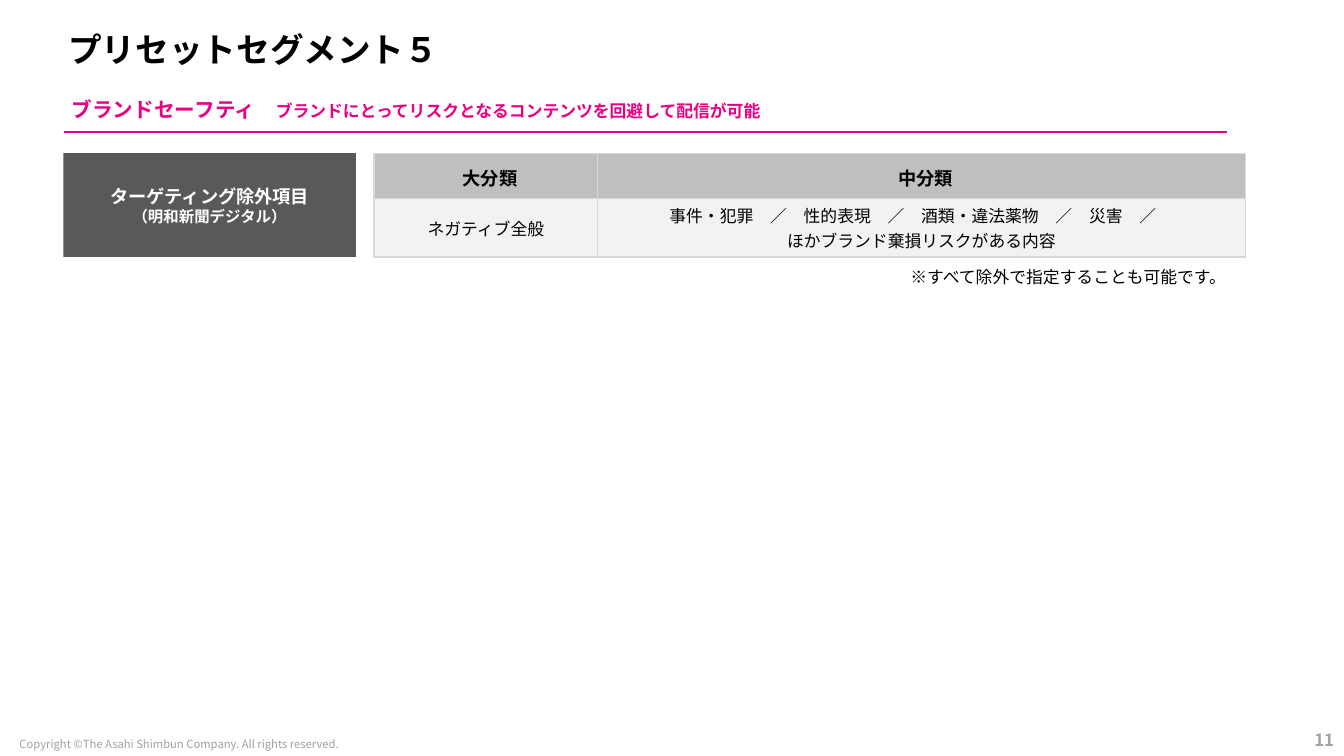
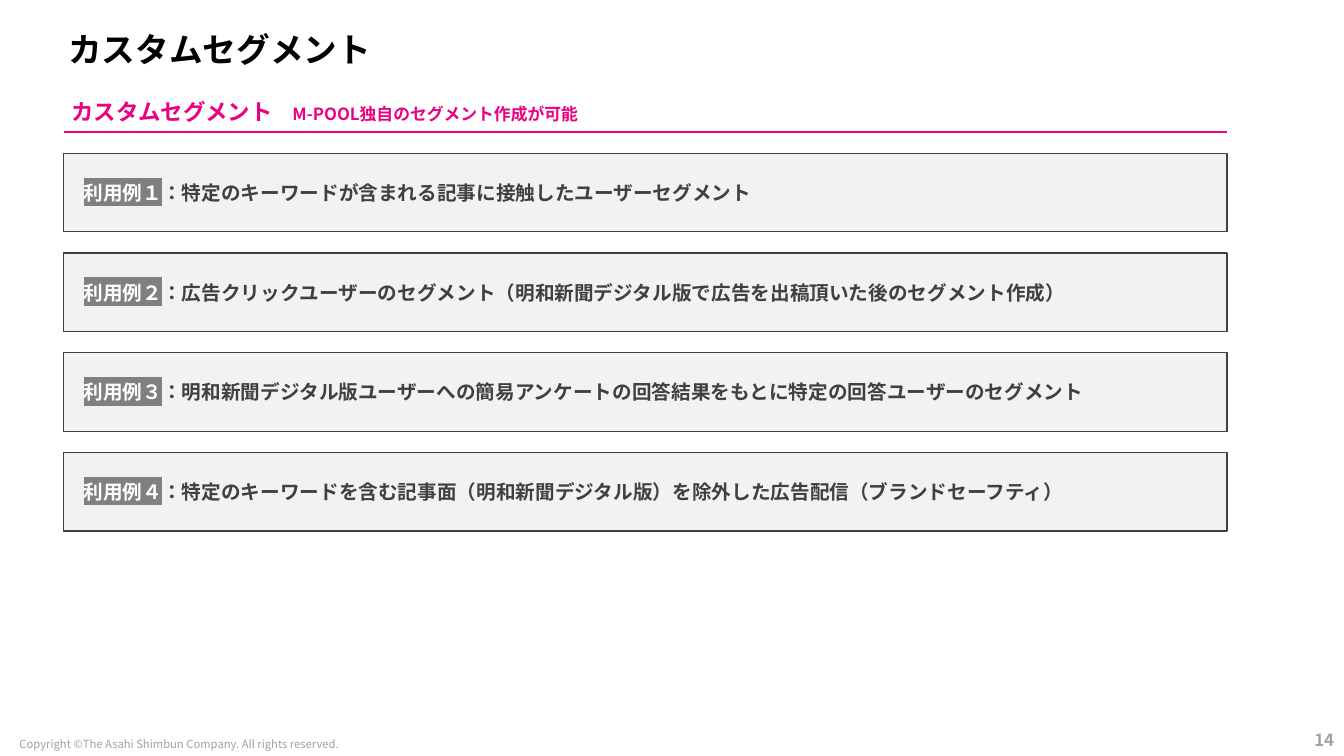
import pptx
import pptx.dml.color
import pptx.enum.lang
import pptx.enum.shapes
import pptx.enum.text
import pptx.oxml
import pptx.oxml.ns
import pptx.util

Inches, Pt = pptx.util.Inches, pptx.util.Pt
ALIGN, ANCHOR = pptx.enum.text.PP_ALIGN, pptx.enum.text.MSO_ANCHOR

FONT = "Noto Sans CJK JP"
COLORS = {
    "black": "000000", "white": "FFFFFF", "accent": "EB0083", "footer": "9FA1A8",
    "label": "595959", "header": "BFBFBF", "panel": "F2F2F2", "border": "D9D9D9",
    "ink": "404040", "tag": "808080",
}
COPYRIGHT = "Copyright ©The Asahi Shimbun Company. All rights reserved."
PADDING = (0.13, 0.13, 0.13, 0.13)
LEFT, RIGHT, CONTENT_TOP = 0.63, 12.17, 1.52

# Each headline is a list of (text, size)
SAFETY = {
    "title": "プリセットセグメント５", "page": "11",
    "headline": [("ブランドセーフティ　", 14.7),
                 ("ブランドにとってリスクとなるコンテンツを回避して配信が可能", 12)],
    "label": [("ターゲティング除外項目", 13), ("（明和新聞デジタル）", 11)],
    "columns": [2.22, 6.42],
    "rows": [0.45, 0.58],
    "cells": [
        [["大分類"], ["中分類"]],
        [["ネガティブ全般"],
         ["事件・犯罪　／　性的表現　／　酒類・違法薬物　／　災害　／　",
          "ほかブランド棄損リスクがある内容"]],
    ],
    "note": "※すべて除外で指定することも可能です。",
}
CUSTOM = {
    "title": "カスタムセグメント", "page": "14",
    "headline": [("カスタムセグメント", 16), ("　", 14),
                 ("M-POOL独自のセグメント作成が可能", 12)],
    "examples": [
        ("利用例１", "特定のキーワードが含まれる記事に接触したユーザーセグメント"),
        ("利用例２", "広告クリックユーザーのセグメント（明和新聞デジタル版で広告を出稿頂いた後のセグメント作成）"),
        ("利用例３", "明和新聞デジタル版ユーザーへの簡易アンケートの回答結果をもとに特定の回答ユーザーのセグメント"),
        ("利用例４", "特定のキーワードを含む記事面（明和新聞デジタル版）を除外した広告配信（ブランドセーフティ）"),
    ],
}


def rgb(color):
    return pptx.dml.color.RGBColor.from_string(COLORS[color])


def add_xml(parent, markup):
    parent.append(pptx.oxml.parse_xml(
        markup.replace(">", " " + pptx.oxml.ns.nsdecls("a") + ">", 1)))


def add_run(paragraph, text, size, color, bold=False, highlight=None):
    run = paragraph.add_run()
    run.text = text
    run.font.size, run.font.bold = Pt(size), bold
    run.font.language_id = pptx.enum.lang.MSO_LANGUAGE_ID.JAPANESE
    run.font.color.rgb = rgb(color)
    properties = run.font._element
    if highlight:
        add_xml(properties, f'<a:highlight><a:srgbClr val="{COLORS[highlight]}"/></a:highlight>')
    run.font.name = FONT
    add_xml(properties, f'<a:ea typeface="{FONT}"></a:ea>')


def set_margins(owner, margins):
    """Set left, top, right and bottom margins of a text frame or table cell."""
    (owner.margin_left, owner.margin_top,
     owner.margin_right, owner.margin_bottom) = map(Inches, margins)


def add_text(slide, box, runs, color, bold=False, align=ALIGN.LEFT,
             anchor=ANCHOR.TOP, margins=(0.1, 0.05, 0.1, 0.05), wrap=True):
    """Add a one-paragraph text box from (text, size) runs."""
    frame = slide.shapes.add_textbox(*map(Inches, box)).text_frame
    frame.word_wrap, frame.vertical_anchor = wrap, anchor
    set_margins(frame, margins)
    paragraph = frame.paragraphs[0]
    paragraph.alignment = align
    for text, size in runs:
        add_run(paragraph, text, size, color, bold)
    return paragraph


def add_panel(slide, box, fill, margins, line=None):
    panel = slide.shapes.add_shape(
        pptx.enum.shapes.MSO_SHAPE.RECTANGLE, *map(Inches, box))
    panel.shadow.inherit = False
    panel.fill.solid()
    panel.fill.fore_color.rgb = rgb(fill)
    if line:
        panel.line.color.rgb, panel.line.width = rgb(line), Pt(1)
    else:
        panel.line.fill.background()
    frame = panel.text_frame
    frame.word_wrap, frame.vertical_anchor = True, ANCHOR.MIDDLE
    set_margins(frame, margins)
    return frame


def start_slide(deck, content):
    """Add a slide with the shared title, headline, rule and footer."""
    slide = deck.slides.add_slide(deck.slide_layouts[6])
    add_text(slide, (0.09, 7.3, 3.38, 0.17), [(COPYRIGHT, 8)], "footer",
             align=ALIGN.CENTER, anchor=ANCHOR.MIDDLE, wrap=False)
    add_text(slide, (12.55, 7.17, 0.78, 0.33), [(content["page"], 12)], "footer",
             bold=True, align=ALIGN.RIGHT, anchor=ANCHOR.MIDDLE)
    title = add_text(slide, (0.58, 0.28, 9.96, 0.47), [(content["title"], 24)],
                     "black", bold=True, anchor=ANCHOR.MIDDLE)
    title.line_spacing = 0.9
    add_text(slide, (0.58, 0.84, 11.42, 0.78), content["headline"], "accent",
             bold=True, margins=PADDING)
    rule = slide.shapes.add_connector(
        pptx.enum.shapes.MSO_CONNECTOR.STRAIGHT,
        *map(Inches, (LEFT, 1.31, RIGHT, 1.31)))
    rule.line.color.rgb, rule.line.width = rgb("accent"), Pt(1.5)
    add_xml(rule._element.spPr, "<a:effectLst></a:effectLst>")
    return slide


def fill_cell(cell, lines, is_header):
    properties = cell._tc.get_or_add_tcPr()
    for side in "LRTB":
        add_xml(properties, f'<a:ln{side} w="{Pt(1)}"><a:solidFill><a:srgbClr '
                            f'val="{COLORS["border"]}"/></a:solidFill></a:ln{side}>')
    cell.fill.solid()
    cell.fill.fore_color.rgb = rgb("header" if is_header else "panel")
    cell.vertical_anchor = ANCHOR.MIDDLE
    set_margins(cell, (0.11, 0.04, 0.03, 0) if is_header else (0.03, 0, 0.03, 0))
    frame = cell.text_frame
    for index, line in enumerate(lines):
        paragraph = frame.add_paragraph() if index else frame.paragraphs[0]
        paragraph.alignment = ALIGN.CENTER
        add_run(paragraph, line, 13 if is_header else 12, "black", is_header)


def build_safety(deck):
    slide = start_slide(deck, SAFETY)
    columns, rows = SAFETY["columns"], SAFETY["rows"]
    label = add_panel(slide, (LEFT, CONTENT_TOP, 2.9, sum(rows)), "label", PADDING)
    for index, (text, size) in enumerate(SAFETY["label"]):
        paragraph = label.add_paragraph() if index else label.paragraphs[0]
        paragraph.alignment = ALIGN.CENTER
        add_run(paragraph, text, size, "white", True)

    box = (3.71, CONTENT_TOP, sum(columns), sum(rows))
    categories = slide.shapes.add_table(
        len(rows), len(columns), *map(Inches, box)).table
    categories.first_row = categories.horz_banding = False
    for column, width in zip(categories.columns, columns):
        column.width = Inches(width)
    for row, height, texts in zip(categories.rows, rows, SAFETY["cells"]):
        row.height = Inches(height)
        for cell, lines in zip(row.cells, texts):
            fill_cell(cell, lines, texts is SAFETY["cells"][0])
    add_text(slide, (8.9, 2.55, 3.78, 0.47), [(SAFETY["note"], 12)], "black",
             margins=PADDING)


def build_custom(deck):
    slide = start_slide(deck, CUSTOM)
    height, pitch = 0.78, 0.99
    for index, (tag, text) in enumerate(CUSTOM["examples"]):
        box = (LEFT, CONTENT_TOP + index * pitch, RIGHT - LEFT, height)
        example = add_panel(slide, box, "panel", (0.2, 0.13, 0.2, 0.13), "ink")
        paragraph = example.paragraphs[0]
        paragraph.alignment = ALIGN.LEFT
        add_run(paragraph, tag, 14, "white", True, highlight="tag")
        add_run(paragraph, "：" + text, 14, "ink", True)


def main():
    deck = pptx.Presentation()
    deck.slide_width, deck.slide_height = Inches(13.33), Inches(7.5)
    build_safety(deck)
    build_custom(deck)
    deck.save("out.pptx")


if __name__ == "__main__":
    main()
